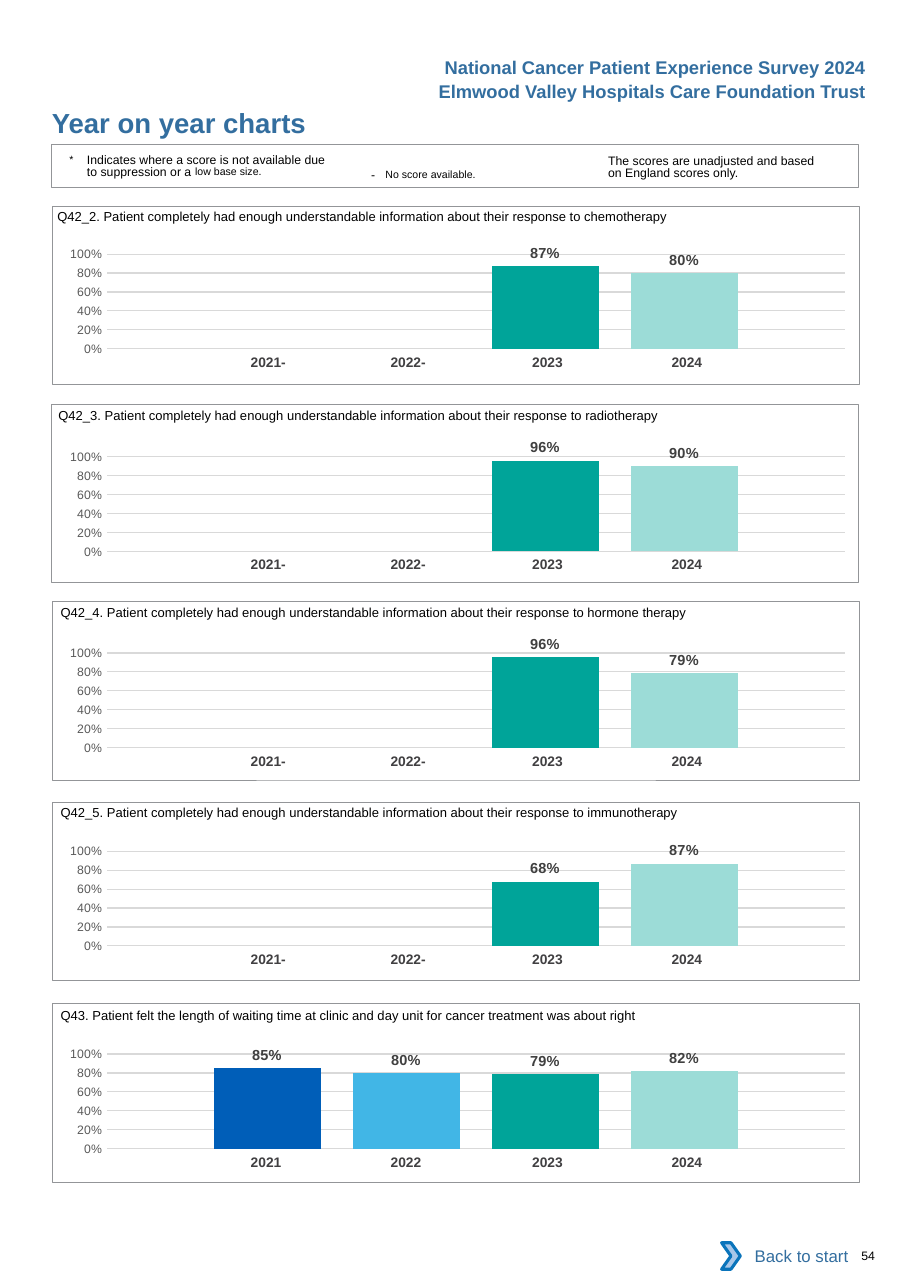
from lxml import etree
from pptx import Presentation
from pptx.chart.data import CategoryChartData
from pptx.dml.color import RGBColor
from pptx.enum.chart import XL_CHART_TYPE, XL_LABEL_POSITION, XL_TICK_MARK
from pptx.enum.shapes import MSO_SHAPE
from pptx.enum.text import MSO_ANCHOR, PP_ALIGN
from pptx.util import Inches, Pt

COLUMN = XL_CHART_TYPE.COLUMN_CLUSTERED
OUTSIDE_END = XL_LABEL_POSITION.OUTSIDE_END
NO_TICK = XL_TICK_MARK.NONE
RECTANGLE, CHEVRON = MSO_SHAPE.RECTANGLE, MSO_SHAPE.CHEVRON
LEFT, CENTER, RIGHT = PP_ALIGN.LEFT, PP_ALIGN.CENTER, PP_ALIGN.RIGHT
TOP, MIDDLE = MSO_ANCHOR.TOP, MSO_ANCHOR.MIDDLE

BLUE, BLACK, GREY = "336E9F", "000000", "939598"
YEARS = ["2021", "2022", "2023", "2024"]
YEAR_COLORS = ["005EB8", "41B6E6", "00A499", "9CDCD7"]
YEAR_WIDTHS = [1.27, 1.27, 1.34, 1.27]
YEAR_RIGHT_MARGINS = [0, 0, 0.04, 0.12]
PLOT_AREA = {"x": 0.079, "y": 0.145, "w": 0.915, "h": 0.666}

INFORMATION = ("Patient completely had enough understandable information "
               "about their response to ")
# Question, its left and top, panel left and top, chart top, yearly scores
PANELS = [
    ("Q42_2. " + INFORMATION + "chemotherapy",
     0.52, 1.8, 0.48, 1.87, 2.12, [None, None, 0.87, 0.80]),
    ("Q42_3. " + INFORMATION + "radiotherapy",
     0.53, 3.61, 0.47, 3.67, 3.96, [None, None, 0.96, 0.90]),
    ("Q42_4. " + INFORMATION + "hormone therapy",
     0.55, 5.4, 0.48, 5.46, 5.74, [None, None, 0.96, 0.79]),
    ("Q42_5. " + INFORMATION + "immunotherapy",
     0.55, 7.21, 0.48, 7.28, 7.54, [None, None, 0.68, 0.87]),
    ("Q43. Patient felt the length of waiting time at clinic and day unit "
     "for cancer treatment was about right",
     0.55, 9.05, 0.48, 9.11, 9.38, [0.85, 0.80, 0.79, 0.82]),
]


def rgb(value):
    return RGBColor.from_string(value)


def write(frame, spans, color=BLACK, bold=False, align=LEFT, anchor=TOP,
          margins=(0, 0, 0, 0), hanging=0, spacing=None):
    """Fill a text frame with (text, size, baseline percent) spans."""
    frame.word_wrap = True
    frame.vertical_anchor = anchor
    (frame.margin_left, frame.margin_top,
     frame.margin_right, frame.margin_bottom) = [Inches(m) for m in margins]
    para = frame.paragraphs[0]
    para.alignment = align
    if spacing:
        para.line_spacing = Pt(spacing)
    if hanging:
        properties = para._p.get_or_add_pPr()
        properties.set("marL", str(Inches(hanging)))
        properties.set("indent", str(-Inches(hanging)))
    for text, size, baseline in spans:
        span = para.add_run()
        span.text = text
        span.font.name = "Arial"
        span.font.size = Pt(size)
        span.font.bold = bold
        span.font.color.rgb = rgb(color)
        if baseline:
            span._r.get_or_add_rPr().set("baseline", str(baseline * 1000))


deck = Presentation()
deck.slide_width, deck.slide_height = Inches(8.26), Inches(11.69)
page = deck.slides.add_slide(deck.slide_layouts[5])
shapes = page.shapes

# Page title
title = shapes.title
title.left, title.top = Inches(0.47), Inches(0.96)
title.width, title.height = Inches(4.5), Inches(0.3)
write(title.text_frame, [("Year on year charts", 18, 0)], BLUE, True)

# Survey and trust names
for top, name in [(0.46, "National Cancer Patient Experience Survey 2024"),
                  (0.68, "Elmwood Valley Hospitals Care Foundation Trust")]:
    box = shapes.add_textbox(Inches(3.46), Inches(top), Inches(4.5), Inches(0.3))
    write(box.text_frame, [(name, 12, 0)], BLUE, True, RIGHT,
          margins=(0.1, 0.05, 0.1, 0.05))

# Question panels: question, year labels, chart and frame
for question, left, top, panel_left, panel_top, chart_top, scores in PANELS:
    box = shapes.add_textbox(Inches(left), Inches(top), Inches(7.2), Inches(0.24))
    write(box.text_frame, [(question, 8.5, 0)], margins=(0, 0.09, 0, 0))

    table = shapes.add_table(1, len(YEARS), Inches(1.73), Inches(chart_top + 1.05),
                             Inches(sum(YEAR_WIDTHS)), Inches(0.27)).table
    table.first_row = table.horz_banding = False
    for index, (year, score) in enumerate(zip(YEARS, scores)):
        table.columns[index].width = Inches(YEAR_WIDTHS[index])
        cell = table.cell(0, index)
        cell.fill.background()
        label = year if score is not None else year + "-"
        write(cell.text_frame, [(label, 9, 0)], "414042", True, CENTER)
        cell.margin_left = Inches(0.1 if score is not None else 0.14)
        cell.margin_right = Inches(YEAR_RIGHT_MARGINS[index])
        cell.margin_top = cell.margin_bottom = Inches(0.05)

    data = CategoryChartData(number_format="0%")
    data.categories = ["1"]
    for number, score in enumerate(scores, 1):
        data.add_series(f"Series {number}", [score])
    chart = shapes.add_chart(COLUMN, Inches(0.39), Inches(chart_top),
                             Inches(7.32), Inches(1.29), data).chart
    chart.has_legend = chart.has_title = False
    chart.font.name, chart.font.size = "Calibri", Pt(10)
    chart.font.color.rgb = rgb(BLACK)
    chart.category_axis.visible = False

    axis = chart.value_axis
    axis.minimum_scale, axis.maximum_scale, axis.major_unit = 0, 1, 0.2
    axis.major_tick_mark = axis.minor_tick_mark = NO_TICK
    axis.format.line.fill.background()
    axis.major_gridlines.format.line.color.rgb = rgb("D9D9D9")
    axis.major_gridlines.format.line.width = Pt(0.75)
    axis.tick_labels.number_format = "0%"
    axis.tick_labels.number_format_is_linked = False
    axis.tick_labels.font.name = "Arial"
    axis.tick_labels.font.size = Pt(8)
    axis.tick_labels.font.color.rgb = rgb("595959")

    plot = chart.plots[0]
    plot.gap_width, plot.overlap = 200, -30
    plot.vary_by_categories = False
    for series, color in zip(plot.series, YEAR_COLORS):
        series.format.fill.solid()
        series.format.fill.fore_color.rgb = rgb(color)
        labels = series.data_labels
        labels.show_value = True
        labels.position = OUTSIDE_END
        labels.number_format, labels.number_format_is_linked = "0%", False
        labels.font.name, labels.font.size = "Arial", Pt(9.5)
        labels.font.bold = True
        labels.font.color.rgb = rgb("404040")

    # Fixed inner plot area
    plot_area = chart._chartSpace.chart.plotArea
    namespace = "{%s}" % plot_area.nsmap["c"]
    for old_layout in plot_area.findall(namespace + "layout"):
        plot_area.remove(old_layout)
    layout = etree.Element(namespace + "layout")
    manual = etree.SubElement(layout, namespace + "manualLayout")
    settings = [("layoutTarget", "inner"), ("xMode", "edge"), ("yMode", "edge")]
    for tag, value in settings + list(PLOT_AREA.items()):
        etree.SubElement(manual, namespace + tag).set("val", str(value))
    plot_area.insert(0, layout)

    panel = shapes.add_shape(RECTANGLE, Inches(panel_left), Inches(panel_top),
                             Inches(7.32), Inches(1.62))
    panel.shadow.inherit = False
    panel.fill.background()
    panel.line.color.rgb = rgb(GREY)
    panel.line.width = Pt(0.5)

# Key to the symbols
suppressed = [("*\t", 12, 3),
              ("Indicates where a score is not available due to suppression or a ", 8, 0),
              ("low base size.", 12, 7)]
missing = [("-\t", 8, 0), ("No score available.", 12, 3)]
unadjusted = [("The scores are unadjusted and based on England scores only.", 8, 0)]
for left, top, width, spans, margins, hanging, spacing in [
        (5.52, 1.38, 1.98, unadjusted, (0, 0.03, 0, 0), 0, 8.1),
        (3.27, 1.41, 1.83, missing, (0.1, 0.05, 0.1, 0.05), 0.13, None),
        (0.63, 1.38, 2.4, suppressed, (0, 0.03, 0, 0), 0.16, 8.1)]:
    box = shapes.add_textbox(Inches(left), Inches(top), Inches(width), Inches(0.27))
    write(box.text_frame, spans, margins=margins, hanging=hanging, spacing=spacing)

key_frame = shapes.add_shape(RECTANGLE, Inches(0.47), Inches(1.31),
                             Inches(7.32), Inches(0.39))
key_frame.shadow.inherit = False
key_frame.fill.background()
key_frame.line.color.rgb = rgb(GREY)
key_frame.line.width = Pt(0.75)

# Back to start button and page number
button = shapes.add_shape(RECTANGLE, Inches(6.62), Inches(11.19),
                          Inches(1.18), Inches(0.42))
button.shadow.inherit = False
button.fill.solid()
button.fill.fore_color.rgb = rgb("FFFFFF")
button.line.fill.background()
write(button.text_frame, [("Back to start", 11, 0)], BLUE, align=RIGHT,
      anchor=MIDDLE, margins=(0.1, 0.05, 0.1, 0.05))

arrow = shapes.add_shape(CHEVRON, Inches(6.55), Inches(11.28),
                         Inches(0.17), Inches(0.24))
arrow.shadow.inherit = False
arrow.fill.solid()
arrow.fill.fore_color.rgb = rgb("A8C7E9")
arrow.line.color.rgb = rgb("0A74BB")
arrow.line.width = Pt(2)

number_box = shapes.add_textbox(Inches(7.72), Inches(11.33), Inches(0.51), Inches(0.13))
write(number_box.text_frame, [("54", 8, 0)], margins=(0.1, 0, 0, 0))

deck.save("out.pptx")
